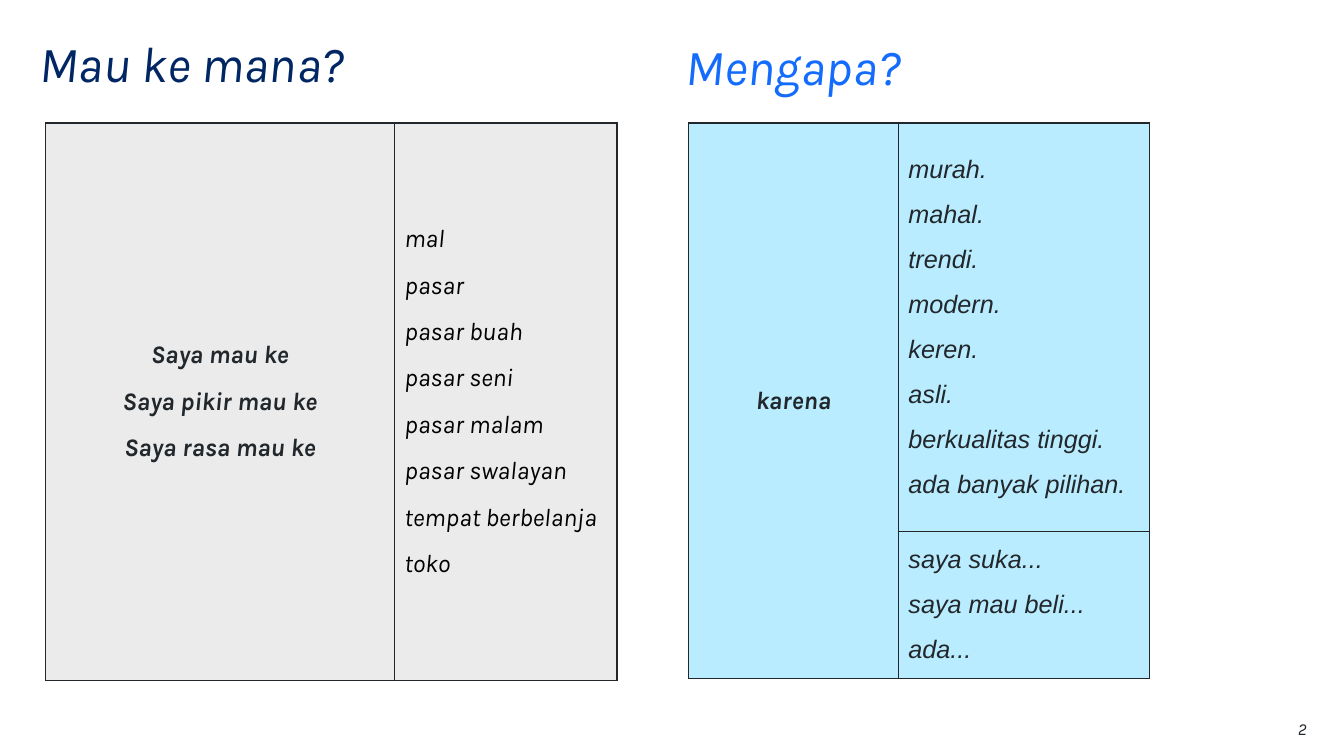
from pptx import Presentation
from pptx.dml.color import RGBColor
from pptx.enum.text import MSO_ANCHOR, PP_ALIGN
from pptx.oxml import parse_xml
from pptx.oxml.ns import nsdecls
from pptx.util import Inches, Pt

INK = "22272B"
NAVY = "002664"
BLUE = "146CFD"
GREY = "EBEBEB"
SKY = "BAECFF"
BLACK = "000000"


def color(value):
    return RGBColor.from_string(value)


class SlideBuilder:
    font_format = {"name": "Karla", "size": Pt(18), "bold": False, "italic": True}
    cell_gap = Pt(6)

    def __init__(self, deck):
        self.page = deck.slides.add_slide(deck.slide_layouts[6])

    def add_span(self, para, text, ink, **changes):
        span = para.add_run()
        span.text = text
        for name, value in {**self.font_format, **changes}.items():
            setattr(span.font, name, value)
        span.font.color.rgb = color(ink)

    def text(self, place, text, ink, size, align=PP_ALIGN.LEFT, line_spacing=1.0):
        box = self.page.shapes.add_textbox(*map(Inches, place))
        frame_format = {
            "word_wrap": True, "margin_left": 0, "margin_right": 0,
            "margin_top": 0, "margin_bottom": 0,
        }
        for name, value in frame_format.items():
            setattr(box.text_frame, name, value)
        para = box.text_frame.paragraphs[0]
        para.alignment = align
        para.line_spacing = line_spacing
        self.add_span(para, text, ink, size=Pt(size))

    def table(self, left, top, widths, heights, fill):
        frame = self.page.shapes.add_table(
            len(heights), len(widths), Inches(left), Inches(top),
            Inches(sum(widths)), Inches(sum(heights)))
        table = frame.table
        table.first_row = False
        table.horz_banding = False
        for column, width in zip(table.columns, widths):
            column.width = Inches(width)
        for row, height in zip(table.rows, heights):
            row.height = Inches(height)
        for cell in table.iter_cells():
            self.border(cell)
            cell.fill.solid()
            cell.fill.fore_color.rgb = color(fill)
        return table

    def border(self, cell):
        properties = cell._tc.get_or_add_tcPr()
        for side in ("lnL", "lnR", "lnT", "lnB"):
            properties.append(parse_xml(
                f'<a:{side} {nsdecls("a")} w="{Pt(1)}"><a:solidFill>'
                f'<a:srgbClr val="{INK}"/></a:solidFill></a:{side}>'))

    def phrases(self, cell, lines, ink=INK, align=PP_ALIGN.LEFT, **changes):
        cell.vertical_anchor = MSO_ANCHOR.MIDDLE
        for index, line in enumerate(lines):
            para = cell.text_frame.add_paragraph() if index else cell.text_frame.paragraphs[0]
            para.alignment = align
            para.space_before = self.cell_gap if index else 0
            para.space_after = self.cell_gap if index < len(lines) - 1 else 0
            self.add_span(para, line, ink, **changes)


def main():
    deck = Presentation()
    deck.slide_width = Inches(13.33)
    deck.slide_height = Inches(7.5)
    slide = SlideBuilder(deck)

    slide.text((0.39, 0.39, 4.23, 0.6), "Mau ke mana?", NAVY, 36, line_spacing=0.9)
    slide.text((6.8, 0.35, 2.47, 0.58), "Mengapa?", BLUE, 36)

    places = slide.table(0.45, 1.22, [3.46, 2.21], [5.53], GREY)
    slide.phrases(
        places.cell(0, 0),
        ["Saya mau ke", "Saya pikir mau ke", "Saya rasa mau ke"],
        align=PP_ALIGN.CENTER, bold=True)
    slide.phrases(
        places.cell(0, 1),
        ["mal", "pasar", "pasar buah", "pasar seni", "pasar malam",
         "pasar swalayan", "tempat berbelanja", "toko"],
        ink=BLACK)

    reasons = slide.table(6.83, 1.22, [2.08, 2.49], [4.05, 1.46], SKY)
    reasons.cell(0, 0).merge(reasons.cell(1, 0))
    slide.phrases(reasons.cell(0, 0), ["karena"], align=PP_ALIGN.CENTER, bold=True)
    slide.phrases(
        reasons.cell(0, 1),
        ["murah.", "mahal.", "trendi.", "modern.", "keren.", "asli.",
         "berkualitas tinggi.", "ada banyak pilihan."],
        name="Arial")
    slide.phrases(
        reasons.cell(1, 1),
        ["saya suka...", "saya mau beli...", "ada..."],
        name="Arial")

    slide.text((12.17, 7.13, 0.79, 0.2), "2", INK, 12, align=PP_ALIGN.RIGHT)
    deck.save("out.pptx")


if __name__ == "__main__":
    main()
